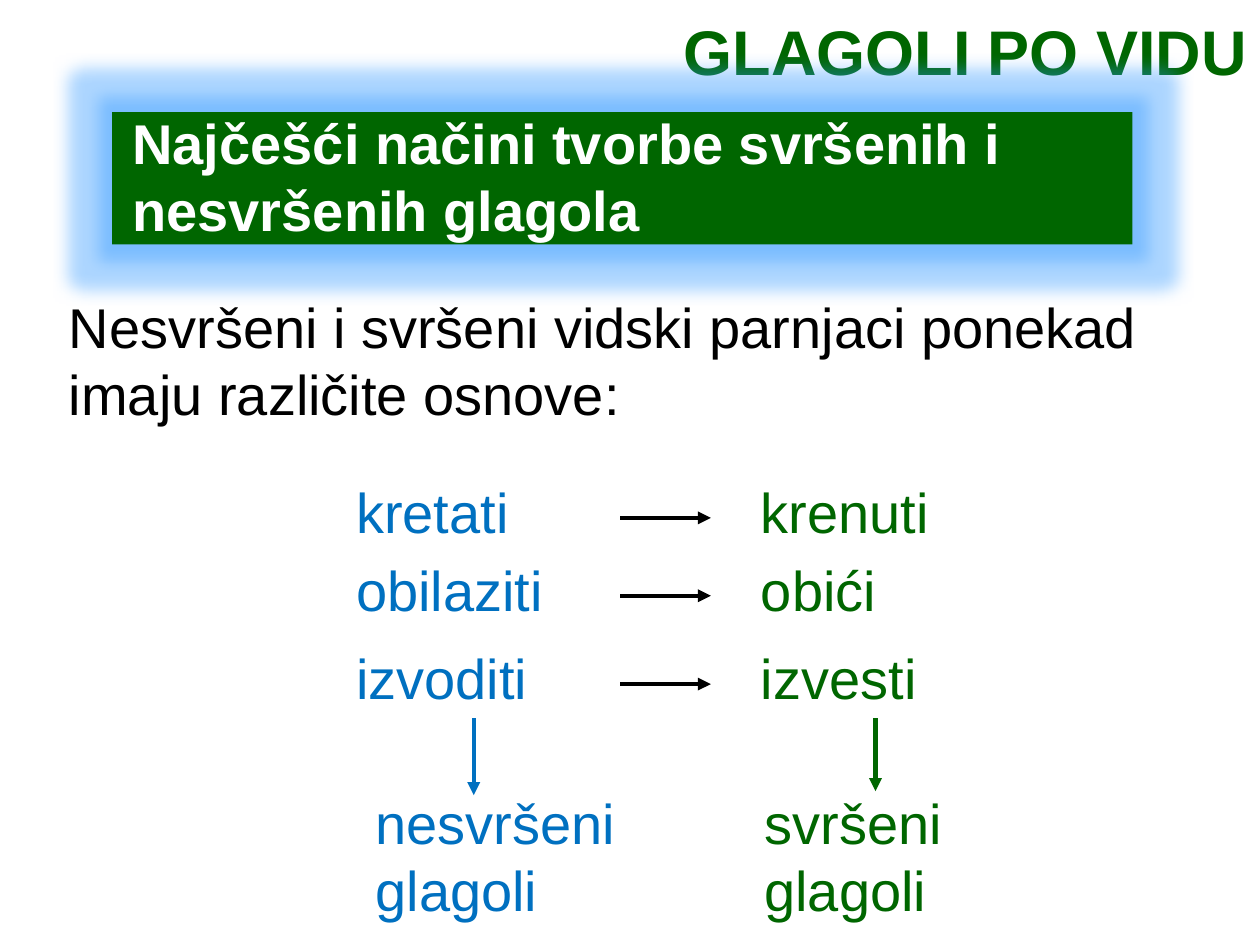
from lxml import etree
from pptx import Presentation
from pptx.dml.color import RGBColor
from pptx.enum.shapes import MSO_CONNECTOR as Connector, MSO_SHAPE as Shape
from pptx.enum.text import MSO_ANCHOR as Anchor, MSO_AUTO_SIZE as AutoSize, PP_ALIGN as Align
from pptx.oxml.ns import qn
from pptx.util import Cm, Pt

GREEN, BLUE, BLACK, WHITE = "006600", "0070C0", "000000", "FFFFFF"
color = RGBColor.from_string


def write(box, text, hue, size=32, bold=False, wrap=True, fit=AutoSize.SHAPE_TO_FIT_TEXT):
    frame = box.text_frame
    frame.word_wrap = wrap
    frame.auto_size = fit
    para = frame.paragraphs[0]
    span = para.add_run()
    span.text = text
    span.font.name = "Arial"
    span.font.size = Pt(size)
    span.font.bold = bold
    span.font.color.rgb = color(hue)
    return para


def arrow(page, x1, y1, x2, y2, hue):
    line = page.shapes.add_connector(Connector.STRAIGHT, Cm(x1), Cm(y1), Cm(x2), Cm(y2))
    line.line.color.rgb = color(hue)
    line.line.width = Pt(2.5)
    etree.SubElement(line.line._get_or_add_ln(), qn("a:tailEnd"), type="triangle")
    etree.SubElement(line._element.spPr, qn("a:effectLst"))


deck = Presentation()
deck.slide_width, deck.slide_height = Cm(25.4), Cm(19.05)
page = deck.slides.add_slide(deck.slide_layouts[5])
page.background.fill.solid()
page.background.fill.fore_color.rgb = color(WHITE)

title = page.shapes.title
title.left, title.top, title.width, title.height = Cm(5.66), Cm(0), Cm(19.74), Cm(1.93)
para = write(title, "GLAGOLI PO VIDU", GREEN, 36, True, fit=AutoSize.NONE)
para.alignment = Align.RIGHT
para.line_spacing = 0.9
title.text_frame.vertical_anchor = Anchor.BOTTOM

banner = page.shapes.add_shape(Shape.RECTANGLE, Cm(2.26), Cm(2.26), Cm(20.57), Cm(2.67))
banner.fill.solid()
banner.fill.fore_color.rgb = color(GREEN)
banner.line.fill.background()
banner.shadow.inherit = False
effects = banner._element.spPr.find(qn("a:effectLst"))
glow = etree.SubElement(effects, qn("a:glow"), rad=str(Pt(18)))
tint = etree.SubElement(glow, qn("a:srgbClr"), val="3399FF")
etree.SubElement(tint, qn("a:alpha"), val="40000")

heading = page.shapes.add_textbox(Cm(2.49), Cm(2.87), Cm(19.02), Cm(2.13))
para = write(heading, "Najčešći načini tvorbe svršenih i nesvršenih glagola", WHITE, bold=True, fit=AutoSize.NONE)
para.space_before = Pt(10)
frame = heading.text_frame
frame.vertical_anchor = Anchor.BOTTOM
frame.margin_left = frame.margin_right = Cm(0.18)
frame.margin_top = frame.margin_bottom = Cm(0.1)

intro = page.shapes.add_textbox(Cm(1.14), Cm(5.77), Cm(24.26), Cm(3))
write(intro, "Nesvršeni i svršeni vidski parnjaci ponekad imaju različite osnove:", BLACK)

pairs = [
    ("kretati", 3.61, "krenuti", 9.5),
    ("obilaziti", 4.32, "obići", 11.07),
    ("izvoditi", 3.99, "izvesti", 12.85),
]
for imperfective, width, perfective, top in pairs:
    left_box = page.shapes.add_textbox(Cm(6.93), Cm(top), Cm(width), Cm(1.62))
    write(left_box, imperfective, BLUE, wrap=False)
    right_box = page.shapes.add_textbox(Cm(15.09), Cm(top), Cm(6.5), Cm(1.62))
    write(right_box, perfective, GREEN)
    arrow(page, 12.5, top + 0.94, 14.33, top + 0.94, BLACK)

aspects = [
    ("nesvršeni glagoli", BLUE, 7.32, 5.46, 9.55, 16.03),
    ("svršeni glagoli", GREEN, 15.16, 6.02, 17.65, 15.95),
]
for label, hue, left, width, arrow_x, arrow_end in aspects:
    arrow(page, arrow_x, 14.48, arrow_x, arrow_end, hue)
    box = page.shapes.add_textbox(Cm(left), Cm(15.77), Cm(width), Cm(3))
    write(box, label, hue)

deck.save("out.pptx")
